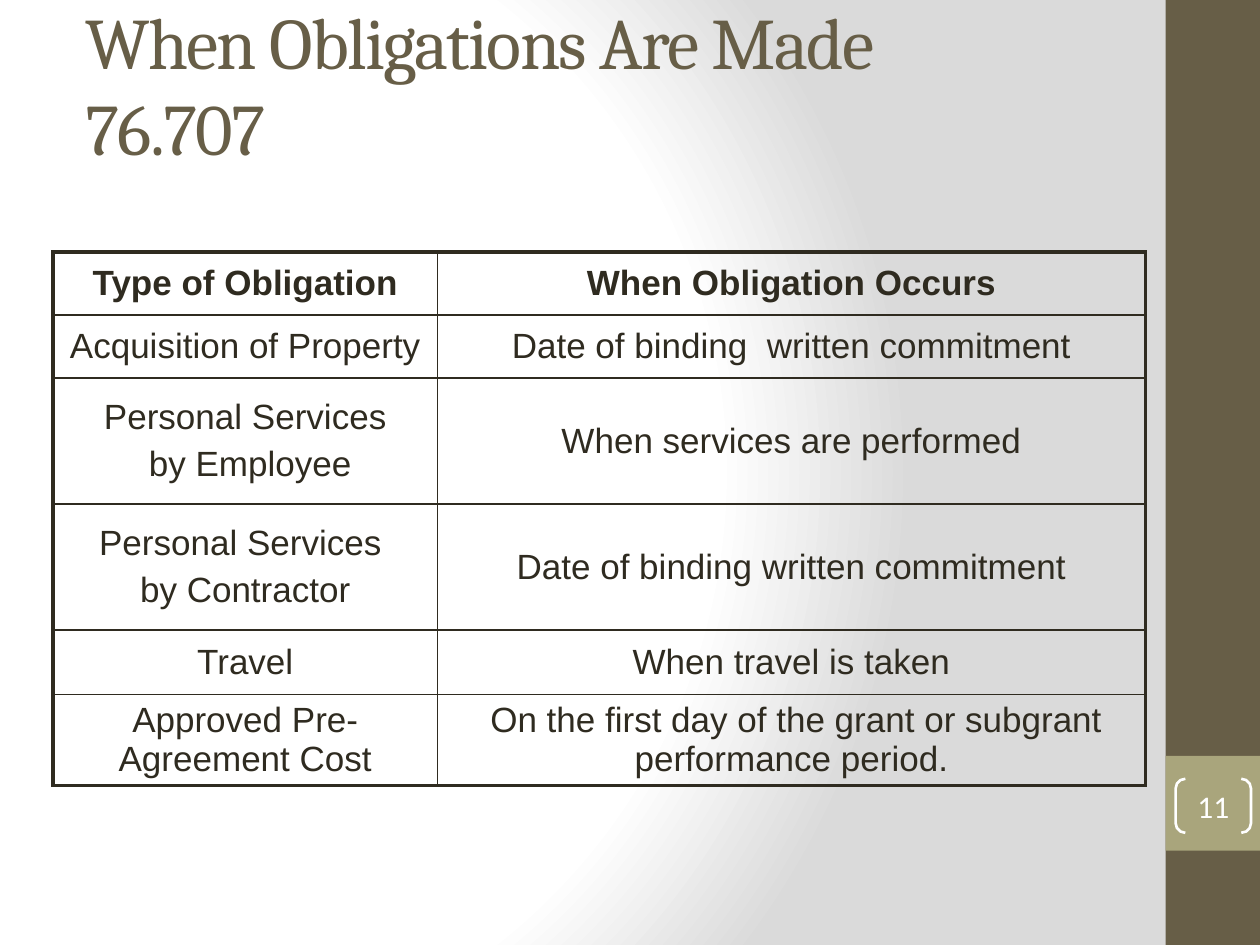
"""Build the slide on when obligations are made."""
from typing import NamedTuple

from lxml.etree import SubElement
from pptx import Presentation
from pptx.dml.color import RGBColor
from pptx.enum.shapes import MSO_SHAPE
from pptx.enum.text import MSO_ANCHOR, MSO_AUTO_SIZE, PP_ALIGN
from pptx.oxml import parse_xml
from pptx.oxml.ns import nsdecls, qn
from pptx.util import Cm, Pt

WHITE = RGBColor(0xFF, 0xFF, 0xFF)
GRAY = RGBColor(0xDA, 0xDA, 0xDA)
BROWN = RGBColor(0x67, 0x5E, 0x47)
OLIVE = RGBColor(0xA9, 0xA5, 0x7C)
INK = RGBColor(0x2F, 0x2B, 0x20)
OUTER_BORDER = Pt(2.25)
INNER_BORDER = Pt(1)
COLUMN_WIDTHS = (7.75, 14.27)


class Obligation(NamedTuple):
    kind: str
    occurs: str
    height: float


class Panel(NamedTuple):
    top: float
    height: float
    color: RGBColor


OBLIGATIONS = (
    Obligation("Type of Obligation", "When Obligation Occurs", 1.27),
    Obligation("Acquisition of Property", "Date of binding  written commitment", 1.27),
    Obligation("Personal Services\n by Employee", "When services are performed", 2.54),
    Obligation("Personal Services \nby Contractor", "Date of binding written commitment", 2.54),
    Obligation("Travel", "When travel is taken", 1.3),
    Obligation("Approved Pre-Agreement Cost",
               " On the first day of the grant or subgrant performance period.", 1.3),
)
PANELS = (Panel(0, 19.05, BROWN), Panel(15.24, 1.91, OLIVE))


def set_background(slide) -> None:
    slide.background.fill.solid()
    properties = slide.element.find(".//" + qn("p:bgPr"))
    stops = "".join(
        f'<a:gs pos="{position * 1000}"><a:srgbClr val="{color}"/></a:gs>'
        for position, color in ((0, WHITE), (75, WHITE), (100, GRAY))
    )
    properties.replace(properties[0], parse_xml(
        f'<a:gradFill {nsdecls("a")} rotWithShape="1"><a:gsLst>{stops}</a:gsLst>'
        '<a:path path="circle">'
        '<a:fillToRect l="20000" t="50000" r="100000" b="50000"/>'
        '</a:path></a:gradFill>'
    ))


def add_title(slide) -> None:
    title = slide.shapes.title
    title.left, title.top, title.width, title.height = Cm(1.47), Cm(0.64), Cm(23.29), Cm(3.81)
    frame = title.text_frame
    frame.text = "When Obligations Are Made\v76.707"
    frame.auto_size = MSO_AUTO_SIZE.NONE
    frame.vertical_anchor = MSO_ANCHOR.MIDDLE
    frame.margin_bottom = Cm(1.85)
    heading = frame.paragraphs[0]
    heading.alignment = PP_ALIGN.LEFT
    for run in heading.runs:
        run.font.name, run.font.size = "Cambria", Pt(41.4)
        run.font.color.rgb = BROWN
        run.font._element.set("spc", "-100")


def add_panel(slide, panel: Panel) -> None:
    band = slide.shapes.add_shape(
        MSO_SHAPE.RECTANGLE, Cm(23.5), Cm(panel.top), Cm(1.9), Cm(panel.height))
    band.shadow.inherit = False
    band.fill.solid()
    band.fill.fore_color.rgb = panel.color
    band.line.fill.background()


def add_page_number(slide) -> None:
    brackets = slide.shapes.add_shape(
        MSO_SHAPE.DOUBLE_BRACKET, Cm(23.7), Cm(15.7), Cm(1.52), Cm(1.09))
    brackets.adjustments[0] = 0.18
    brackets.shadow.inherit = False
    brackets.fill.background()
    brackets.line.color.rgb = WHITE
    brackets.line.width = Pt(1.5)
    frame = brackets.text_frame
    frame.margin_left = frame.margin_right = frame.margin_top = frame.margin_bottom = 0
    frame.vertical_anchor = MSO_ANCHOR.MIDDLE
    frame.text = "11"
    number = frame.paragraphs[0]
    number.alignment = PP_ALIGN.CENTER
    number.font.name, number.font.size = "Calibri", Pt(18)
    number.font.color.rgb = WHITE


def set_border(cell, side: str, width: int) -> None:
    border = SubElement(cell._tc.get_or_add_tcPr(), qn(f"a:ln{side}"), w=str(width))
    SubElement(SubElement(border, qn("a:solidFill")), qn("a:srgbClr"), val=str(INK))


def format_cell(cell, text: str, bold: bool, outer_sides: dict[str, bool]) -> None:
    cell.text = text
    cell.vertical_anchor = MSO_ANCHOR.MIDDLE
    for paragraph in cell.text_frame.paragraphs:
        paragraph.alignment = PP_ALIGN.CENTER
        paragraph.space_before = Pt(4.5)
        paragraph.font.name, paragraph.font.size = "Arial", Pt(20)
        paragraph.font.bold = bold
        paragraph.font.color.rgb = INK
    for side, is_outer in outer_sides.items():
        set_border(cell, side, OUTER_BORDER if is_outer else INNER_BORDER)
    cell.fill.background()


def add_obligations(slide) -> None:
    table = slide.shapes.add_table(
        len(OBLIGATIONS), len(COLUMN_WIDTHS), Cm(1.07), Cm(5.08), Cm(sum(COLUMN_WIDTHS)),
        Cm(sum(obligation.height for obligation in OBLIGATIONS))).table
    table.first_row = table.horz_banding = False
    for column, width in zip(table.columns, COLUMN_WIDTHS):
        column.width = Cm(width)
    last_row, last_column = len(OBLIGATIONS) - 1, len(COLUMN_WIDTHS) - 1
    for row, obligation in enumerate(OBLIGATIONS):
        table.rows[row].height = Cm(obligation.height)
        for column, text in enumerate((obligation.kind, obligation.occurs)):
            outer_sides = {"L": column == 0, "R": column == last_column,
                           "T": row == 0, "B": row == last_row}
            format_cell(table.cell(row, column), text, row == 0, outer_sides)


def main() -> None:
    presentation = Presentation()
    presentation.slide_width, presentation.slide_height = Cm(25.4), Cm(19.05)
    slide = presentation.slides.add_slide(presentation.slide_layouts[5])
    set_background(slide)
    for panel in PANELS:
        add_panel(slide, panel)
    add_title(slide)
    add_obligations(slide)
    add_page_number(slide)
    presentation.save("out.pptx")


if __name__ == "__main__":
    main()
